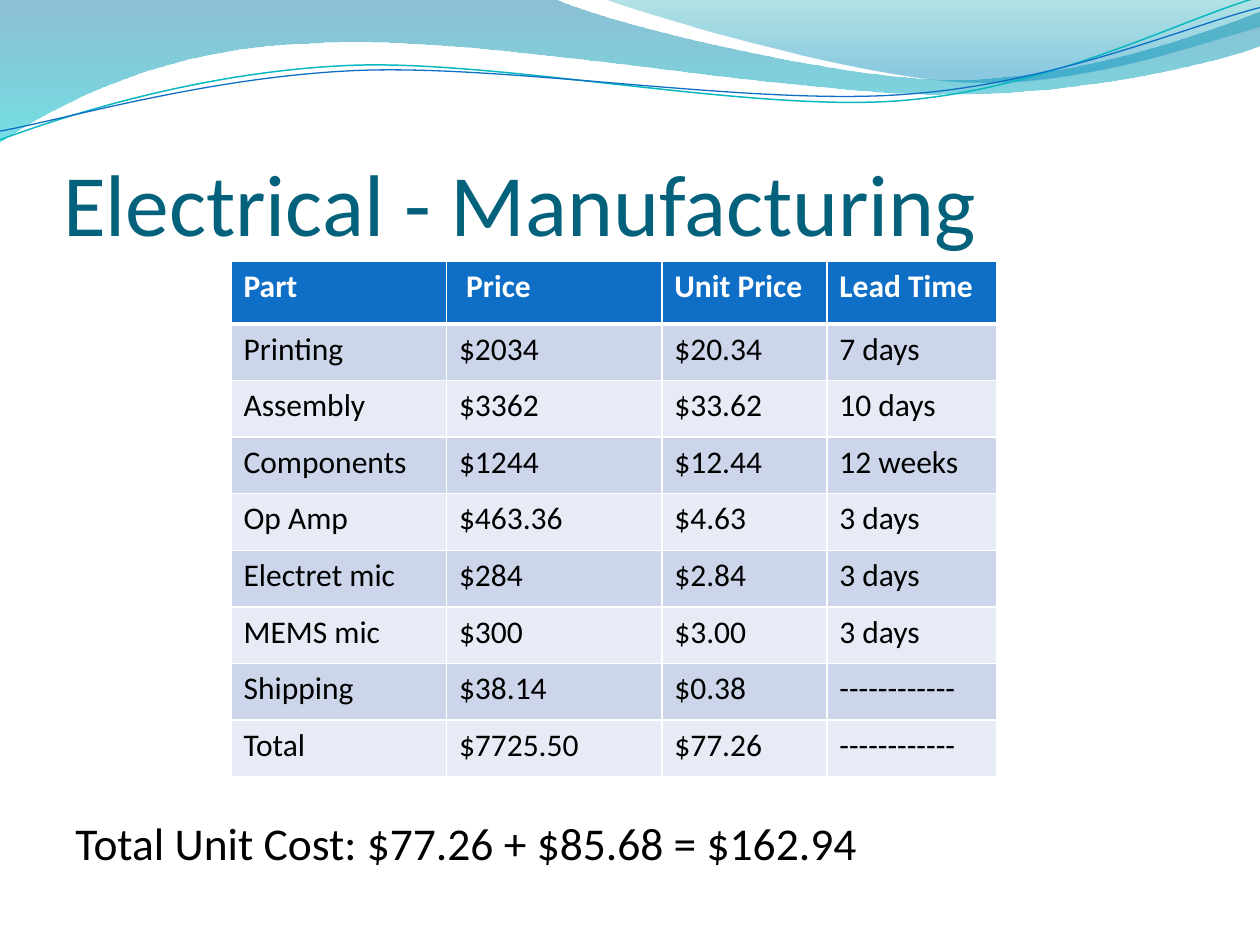
from math import cos, radians, sin

from lxml import etree
from pptx import Presentation
from pptx.dml.color import RGBColor
from pptx.enum.text import MSO_ANCHOR, MSO_AUTO_SIZE, PP_ALIGN
from pptx.oxml.ns import qn
from pptx.util import Pt

TOP, BOTTOM = MSO_ANCHOR.TOP, MSO_ANCHOR.BOTTOM
LEFT = PP_ALIGN.LEFT
NO_AUTOFIT = MSO_AUTO_SIZE.NONE
FONT = "Calibri"
COLORS = {
    "title": "04617B", "text": "000000", "white": "FFFFFF",
    "header": "0F6FC6", "odd": "CCD5EA", "even": "E7EBF5",
    "teal line": "0AB8BF", "blue line": "0F6FC6",
    "deep blue": "0074A1", "aqua": "00C6CF",
    "sea green": "00A1A9", "sky blue": "008BBF",
}

TITLE = "Electrical - Manufacturing"
TOTAL_COST = "Total Unit Cost: $77.26 + $85.68 = $162.94"
PARTS = [
    ("Part", " Price", "Unit Price", "Lead Time"),
    ("Printing", "$2034", "$20.34", "7 days"),
    ("Assembly", "$3362", "$33.62", "10 days"),
    ("Components", "$1244", "$12.44", "12 weeks"),
    ("Op Amp", "$463.36", "$4.63", "3 days"),
    ("Electret mic", "$284", "$2.84", "3 days"),
    ("MEMS mic", "$300", "$3.00", "3 days"),
    ("Shipping", "$38.14", "$0.38", "------------"),
    ("Total", "$7725.50", "$77.26", "------------"),
]
COLUMN_WIDTHS = (123.1, 123.1, 94.3, 97.4)
HEADER_HEIGHT, ROW_HEIGHT = 35.6, 32.35

# An outline is a start point, then segments: one point is a line, three a Bézier curve.
# Points are slide positions after turning; a box is left, top, width, height before it.
# A gradient stop is position, colour, opacity in percent.
WAVES = [
    {"box": (-0.7, -0.7, 721.4, 82.1), "turn": 0, "start": (0, 0),
     "segments": [
         [(316.8, -0.7)],
         [(342.7, 12.2), (478.1, 45.4), (545.8, 45.4)],
         [(614.2, 45.4), (689.8, 18.7), (720, 6.5)],
         [(720.7, 25.9)],
         [(707.8, 31.7), (626.4, 54.7), (537.1, 54)],
         [(447.8, 54), (275, 20.2), (185, 24.5)],
         [(92.9, 25.9), (33.1, 59.8), (-0.7, 81.4)]],
     "gradient": [(0, "deep blue", 45), (1, "aqua", 55)]},
    {"box": (344.9, -0.7, 375.1, 50.4), "turn": 0, "start": (344.9, -0.7),
     "segments": [
         [(366.5, 7.9), (491, 44.6), (553.7, 46.8)],
         [(616.3, 49.7), (691.9, 23), (720, 15.1)],
         [(720, 0)]],
     "gradient": [(0, "sea green", 30), (0.8, "sky blue", 45)]},
    {"box": (-1.4, 15.8, 721.4, 51.1), "turn": -2.7, "start": (0, 79.9),
     "segments": [
         [(34.6, 67), (113.8, 41), (199.4, 37.4)],
         [(284.4, 33.8), (427, 64.1), (513.4, 57.6)],
         [(599.8, 51.1), (675.4, 10.8), (718.6, -1.4)]],
     "line": ("teal line", 0.85)},
    {"box": (-1.4, 21.6, 722.2, 41.8), "turn": -2.7, "start": (0, 74.9),
     "segments": [
         [(33.8, 69.1), (118.1, 43.9), (203.8, 40.3)],
         [(290.2, 36.7), (429.8, 60.5), (516.2, 54)],
         [(601.9, 48.2), (677.5, 15.1), (720, 4.3)]],
     "line": ("blue line", 0.75)},
]


def rgb(name):
    return RGBColor.from_string(COLORS[name])


def write(frame, text, size, color="text", bold=False, anchor=TOP, before=0):
    frame.vertical_anchor = anchor
    paragraph = frame.paragraphs[0]
    paragraph.alignment = LEFT
    paragraph.space_before = Pt(before)
    run = paragraph.add_run()
    run.text = text
    run.font.name, run.font.size, run.font.bold = FONT, Pt(size), bold
    run.font.color.rgb = rgb(color)


def point_in_box(point, box, turn):
    """Turn a slide position back about the box centre and measure it from the box corner."""
    left, top, width, height = box
    dx, dy = point[0] - left - width / 2, point[1] - top - height / 2
    angle = radians(-turn)
    return (width / 2 + dx * cos(angle) - dy * sin(angle),
            height / 2 + dx * sin(angle) + dy * cos(angle))


def set_curves(shape, wave):
    """Give the freeform its box and put true Bézier segments in its path."""
    box, turn = wave["box"], wave["turn"]
    shape.left, shape.top, shape.width, shape.height = map(Pt, box)
    shape.rotation = turn
    outline = next(shape.element.iter(qn("a:path")))
    outline.set("w", str(shape.width))
    outline.set("h", str(shape.height))
    for child in list(outline):
        outline.remove(child)
    steps = [("moveTo", [wave["start"]])]
    steps += [("lnTo" if len(s) == 1 else "cubicBezTo", s) for s in wave["segments"]]
    for tag, points in steps:
        step = etree.SubElement(outline, qn(f"a:{tag}"))
        for point in points:
            x, y = point_in_box(point, box, turn)
            etree.SubElement(step, qn("a:pt"), x=str(Pt(x)), y=str(Pt(y)))
    if "gradient" in wave:
        etree.SubElement(outline, qn("a:close"))


def fill_gradient(shape, stops):
    """Fill from top to bottom with partly transparent colours."""
    shape.fill.gradient()
    shape.fill.gradient_angle = 270
    for stop, (position, color, _) in zip(shape.fill.gradient_stops, stops):
        stop.position = position
        stop.color.rgb = rgb(color)
    stop_colors = shape.element.spPr.iter(qn("a:srgbClr"))
    for stop_color, (_, _, opacity) in zip(list(stop_colors), stops):
        etree.SubElement(stop_color, qn("a:alpha"), val=str(opacity * 1000))


def add_wave(slide, wave):
    ends = [(Pt(x), Pt(y)) for x, y in (segment[-1] for segment in wave["segments"])]
    builder = slide.shapes.build_freeform(*map(Pt, wave["start"]))
    builder.add_line_segments(ends, close=False)
    shape = builder.convert_to_shape()
    set_curves(shape, wave)
    shape.shadow.inherit = False
    if "gradient" in wave:
        fill_gradient(shape, wave["gradient"])
        shape.line.fill.background()
    else:
        color, width = wave["line"]
        shape.fill.background()
        shape.line.color.rgb = rgb(color)
        shape.line.width = Pt(width)


def set_borders(cell, widths):
    properties = cell._tc.get_or_add_tcPr()
    for index, (side, width) in enumerate(widths.items()):
        border = etree.Element(qn(f"a:ln{side}"), w=str(Pt(width)))
        fill = etree.SubElement(border, qn("a:solidFill"))
        etree.SubElement(fill, qn("a:srgbClr"), val=COLORS["white"])
        properties.insert(index, border)


def add_parts_table(slide, left, top):
    height = HEADER_HEIGHT + ROW_HEIGHT * (len(PARTS) - 1)
    table = slide.shapes.add_table(len(PARTS), len(COLUMN_WIDTHS), Pt(left), Pt(top),
                                   Pt(sum(COLUMN_WIDTHS)), Pt(height)).table
    for column, width in zip(table.columns, COLUMN_WIDTHS):
        column.width = Pt(width)
    for r, part in enumerate(PARTS):
        header = r == 0
        table.rows[r].height = Pt(HEADER_HEIGHT if header else ROW_HEIGHT)
        fill = "header" if header else ("odd" if r % 2 else "even")
        for c, value in enumerate(part):
            cell = table.cell(r, c)
            cell.fill.solid()
            cell.fill.fore_color.rgb = rgb(fill)
            write(cell.text_frame, value, 18, "white" if header else "text", bold=header)
            set_borders(cell, {"L": 1, "R": 1, "T": 3 if r == 1 else 1, "B": 3 if header else 1})


def main():
    prs = Presentation()
    prs.slide_width, prs.slide_height = Pt(720), Pt(540)
    slide = prs.slides.add_slide(prs.slide_layouts[5])
    for wave in WAVES:
        add_wave(slide, wave)

    title = slide.shapes.title
    slide.shapes.element.append(title.element)  # in front of the waves
    title.left, title.top, title.width, title.height = Pt(36), Pt(55.4), Pt(648), Pt(90)
    frame = title.text_frame
    frame.auto_size = NO_AUTOFIT
    frame.margin_left = frame.margin_right = frame.margin_bottom = 0
    write(frame, TITLE, 50, "title", anchor=BOTTOM)

    add_parts_table(slide, 132, 149.5)

    total = slide.shapes.add_textbox(Pt(36), Pt(462.2), Pt(648), Pt(48.2)).text_frame
    total.word_wrap = True
    write(total, TOTAL_COST, 26, before=2)
    prs.save("out.pptx")


if __name__ == "__main__":
    main()
